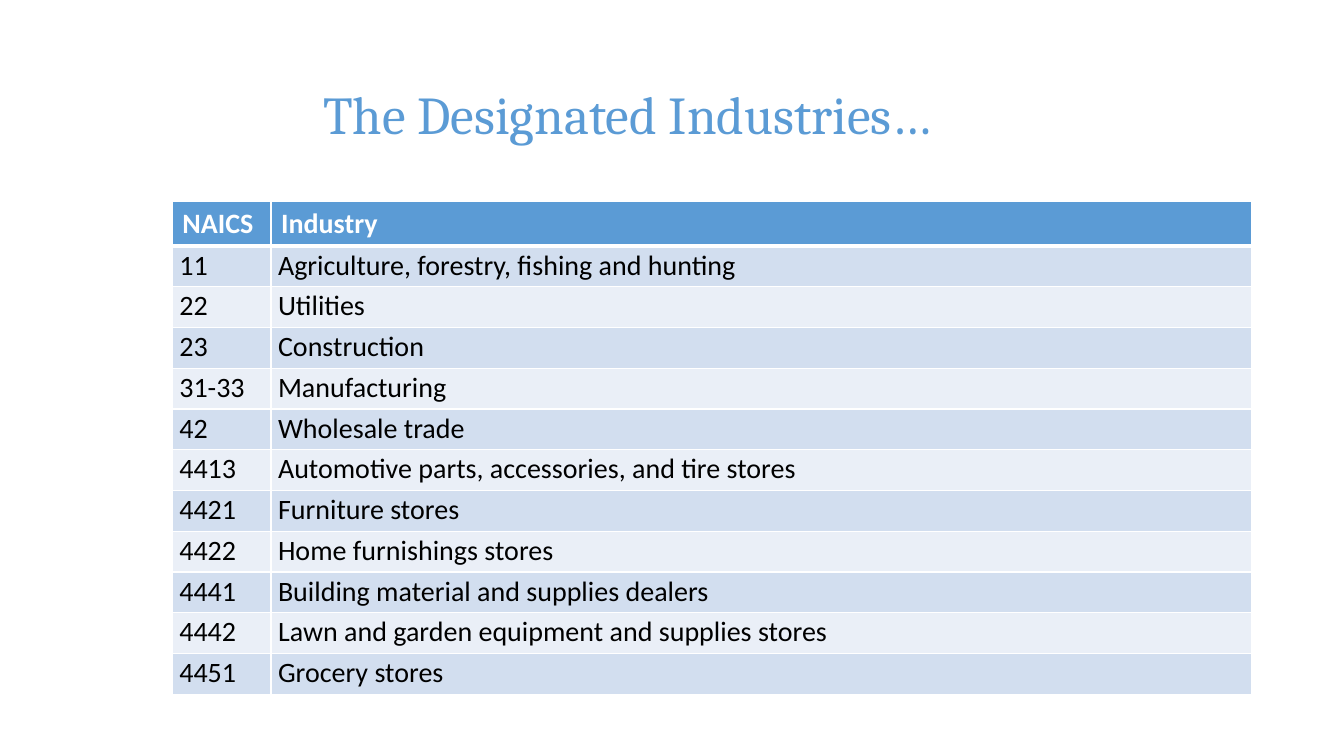
from lxml import etree
from pptx import Presentation
from pptx.dml.color import RGBColor
from pptx.enum.text import MSO_ANCHOR
from pptx.oxml.ns import qn
from pptx.util import Pt

MIDDLE = MSO_ANCHOR.MIDDLE
BLUE = RGBColor(0x5B, 0x9B, 0xD5)
DARK = RGBColor(0xD2, 0xDE, 0xEF)
LIGHT = RGBColor(0xEA, 0xEF, 0xF7)
WHITE = RGBColor(0xFF, 0xFF, 0xFF)
BLACK = RGBColor(0, 0, 0)

HEAD = ("NAICS", "Industry")
ROWS = [
    ("11", "Agriculture, forestry, fishing and hunting"),
    ("22", "Utilities"),
    ("23", "Construction"),
    ("31-33", "Manufacturing"),
    ("42", "Wholesale trade"),
    ("4413", "Automotive parts, accessories, and tire stores"),
    ("4421", "Furniture stores"),
    ("4422", "Home furnishings stores"),
    ("4441", "Building material and supplies dealers"),
    ("4442", "Lawn and garden equipment and supplies stores"),
    ("4451", "Grocery stores"),
]
CODE_W = 70.5
HEAD_H = 31.6

TITLE_FONT = {"name": "Cambria", "size": Pt(38)}
HEAD_FONT = {"name": "Calibri", "size": Pt(20), "bold": True}
BODY_FONT = {"name": "Calibri", "size": Pt(20), "bold": False}
TITLE_BOX = {"word_wrap": True, "vertical_anchor": MIDDLE,
             "margin_left": Pt(48)}
HEAD_CELL = {"margin_left": Pt(7.2), "margin_right": Pt(7.2),
             "margin_top": Pt(3.6), "margin_bottom": Pt(3.6)}
BODY_CELL = {"margin_left": Pt(5), "margin_right": Pt(5),
             "margin_top": 0, "margin_bottom": 0}


def apply(item, style):
    for name, value in style.items():
        setattr(item, name, value)


def style_text(para, style, color):
    apply(para.font, style)
    para.font.color.rgb = color


def add_edges(cell, widths):
    props = cell._tc.get_or_add_tcPr()
    for side, width in zip("LRTB", widths):
        line = etree.SubElement(props, qn(f"a:ln{side}"), w=str(Pt(width)))
        fill = etree.SubElement(line, qn("a:solidFill"))
        etree.SubElement(fill, qn("a:srgbClr"), val=str(WHITE))


def add_title(slide, left, top, width, height):
    box = slide.shapes.add_textbox(Pt(left), Pt(top), Pt(width), Pt(height))
    frame = box.text_frame
    apply(frame, TITLE_BOX)
    frame.text = "The Designated Industries…"
    style_text(frame.paragraphs[0], TITLE_FONT, BLUE)


def add_list(slide, left, top, width, height):
    rows = [HEAD] + ROWS
    frame = slide.shapes.add_table(len(rows), len(HEAD), Pt(left), Pt(top),
                                   Pt(width), Pt(height))
    table = frame.table

    # Column widths and row heights
    for col, size in zip(table.columns, (CODE_W, width - CODE_W)):
        col.width = Pt(size)
    for row in table.rows:
        row.height = Pt((height - HEAD_H) / len(ROWS))
    table.rows[0].height = Pt(HEAD_H)

    # Header and banded body
    for r, row in enumerate(rows):
        for c, text in enumerate(row):
            cell = table.cell(r, c)
            cell.text = text
            para = cell.text_frame.paragraphs[0]
            if r == 0:
                fill = BLUE
                apply(cell, HEAD_CELL)
                style_text(para, HEAD_FONT, WHITE)
            else:
                fill = DARK if r % 2 else LIGHT
                apply(cell, BODY_CELL)
                para.line_spacing = 1.07
                style_text(para, BODY_FONT, BLACK)
            add_edges(cell, (1, 1, 3 if r == 1 else 1, 3 if r == 0 else 1))
            cell.fill.solid()
            cell.fill.fore_color.rgb = fill


def main():
    deck = Presentation()
    deck.slide_width, deck.slide_height = Pt(960), Pt(540)
    slide = deck.slides.add_slide(deck.slide_layouts[6])
    add_list(slide, 123.1, 144, 771.1, 352)
    add_title(slide, 183, 28.8, 711.2, 104.4)
    deck.save("out.pptx")


if __name__ == "__main__":
    main()
